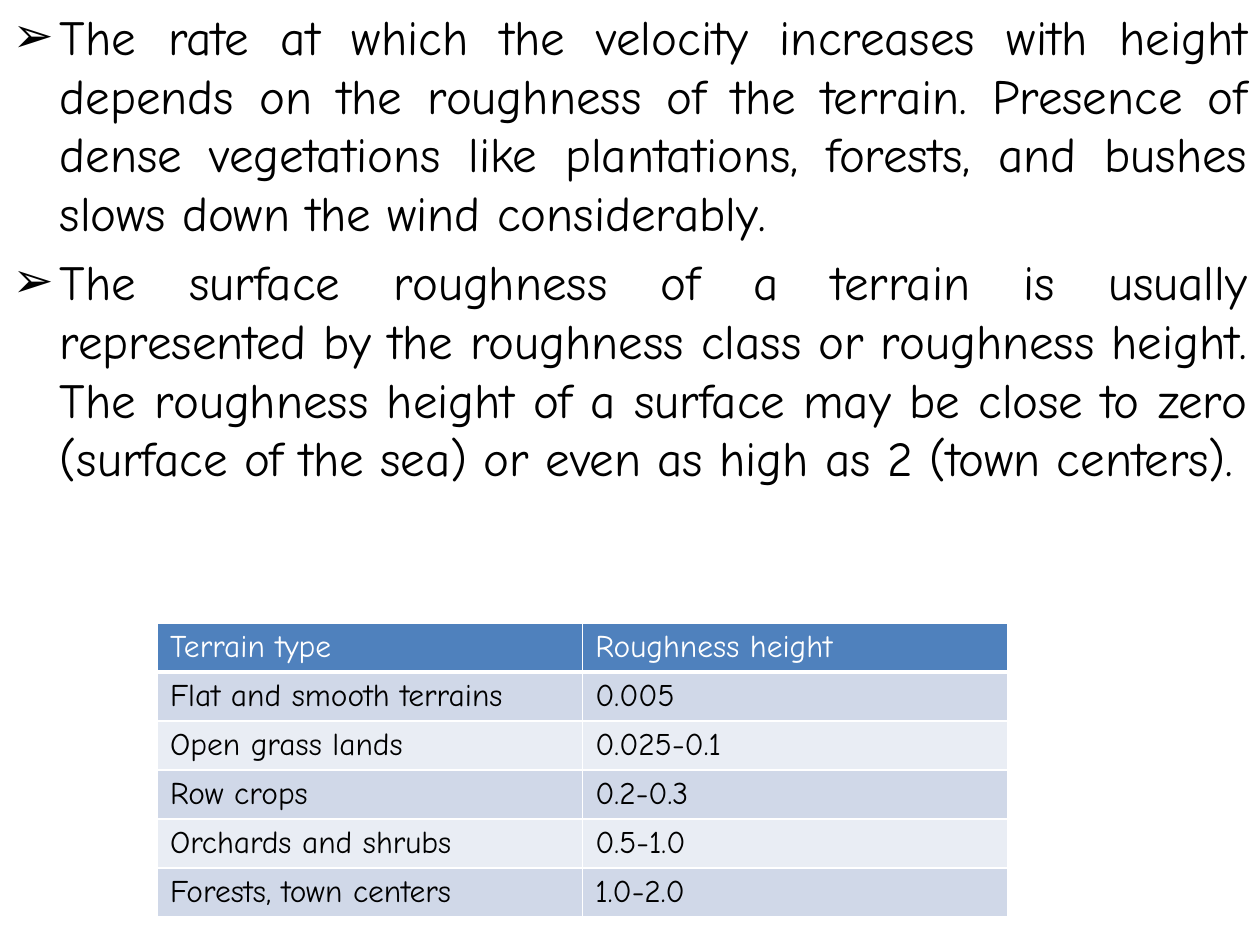
from dataclasses import dataclass

from lxml import etree
from pptx import Presentation
from pptx.dml.color import RGBColor
from pptx.enum.text import MSO_AUTO_SIZE, PP_ALIGN
from pptx.oxml.ns import qn
from pptx.util import Pt

JUSTIFY = PP_ALIGN.JUSTIFY
NO_AUTOFIT = MSO_AUTO_SIZE.NONE


@dataclass(frozen=True)
class Theme:
    font: str = "Comic Neue"
    body_size: int = 28
    table_size: int = 18
    text: str = "000000"
    header_text: str = "FFFFFF"
    header_fill: str = "4F81BD"
    bands: tuple = ("D0D8E8", "E9EDF4")
    border: str = "FFFFFF"


THEME = Theme()

POINTS = [
    "The rate at which the velocity increases with height depends on the "
    "roughness of the terrain. Presence of dense vegetations like plantations, "
    "forests, and bushes slows down the wind considerably.",
    "The surface roughness of a terrain is usually represented by the roughness "
    "class or roughness height. The roughness height of a surface may be close "
    "to zero (surface of the sea) or even as high as 2 (town centers).",
]

TERRAINS = [
    ("Terrain type", "Roughness height"),
    ("Flat and smooth terrains", "0.005"),
    ("Open grass lands", "0.025-0.1"),
    ("Row crops", "0.2-0.3"),
    ("Orchards and shrubs", "0.5-1.0"),
    ("Forests, town centers", "1.0-2.0"),
]


def format_runs(p, size, color):
    for r in p.runs:
        r.font.name = THEME.font
        r.font.size = Pt(size)
        r.font.bold = False
        r.font.color.rgb = RGBColor.from_string(color)


def set_bullet(p, char):
    pPr = p._p.get_or_add_pPr()
    pPr.set("marL", str(Pt(27)))
    pPr.set("indent", str(Pt(-27)))
    etree.SubElement(pPr, qn("a:buChar")).set("char", char)


def set_borders(cell, bottom):
    tcPr = cell._tc.get_or_add_tcPr()
    widths = {"a:lnL": 1, "a:lnR": 1, "a:lnT": 1, "a:lnB": bottom}
    for i, (tag, width) in enumerate(widths.items()):
        ln = etree.Element(qn(tag), w=str(Pt(width)))
        fill = etree.SubElement(ln, qn("a:solidFill"))
        etree.SubElement(fill, qn("a:srgbClr")).set("val", THEME.border)
        tcPr.insert(i, ln)


def add_points(slide, left, top, width, height):
    sp = slide.placeholders[1]
    sp.left, sp.top, sp.width, sp.height = Pt(left), Pt(top), Pt(width), Pt(height)
    tf = sp.text_frame
    tf.auto_size = NO_AUTOFIT
    tf.text = "\n".join(POINTS)
    for p in tf.paragraphs:
        p.alignment = JUSTIFY
        set_bullet(p, "➢")
        format_runs(p, THEME.body_size, THEME.text)


def add_terrain_table(slide, left, top, width, height):
    rows, cols = len(TERRAINS), len(TERRAINS[0])
    table = slide.shapes.add_table(
        rows, cols, Pt(left), Pt(top), Pt(width), Pt(height)
    ).table
    for i, values in enumerate(TERRAINS):
        header = i == 0
        fill = THEME.header_fill if header else THEME.bands[(i - 1) % 2]
        color = THEME.header_text if header else THEME.text
        for j, value in enumerate(values):
            cell = table.cell(i, j)
            cell.text = value
            cell.fill.solid()
            cell.fill.fore_color.rgb = RGBColor.from_string(fill)
            set_borders(cell, 3 if header else 1)
            format_runs(cell.text_frame.paragraphs[0], THEME.table_size, color)


def main():
    prs = Presentation()
    prs.slide_width, prs.slide_height = Pt(720), Pt(540)
    slide = prs.slides.add_slide(prs.slide_layouts[1])
    title = slide.shapes.title
    title.element.getparent().remove(title.element)
    add_points(slide, 0, 0, 720, 540)
    add_terrain_table(slide, 90, 356, 486, 166)
    prs.save("out.pptx")


if __name__ == "__main__":
    main()
